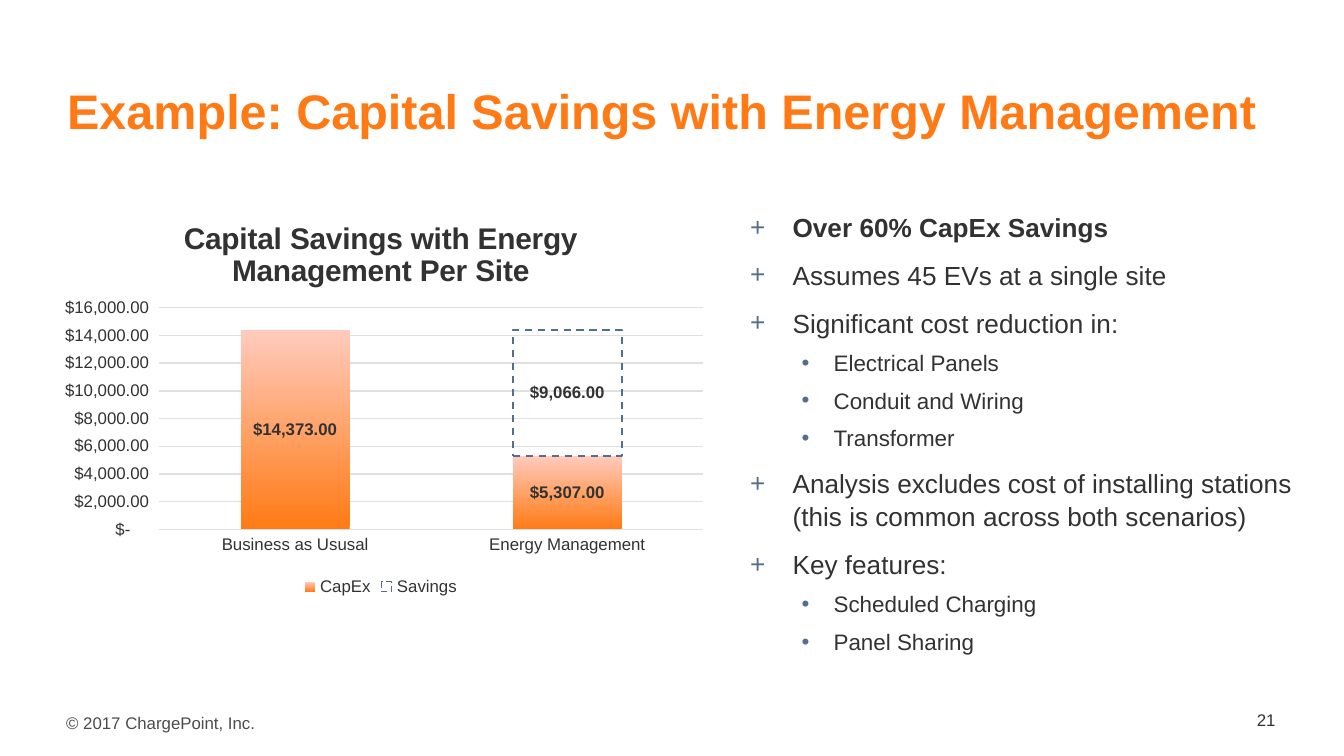
from lxml import etree
from pptx import Presentation
from pptx.chart.data import CategoryChartData
from pptx.dml.color import RGBColor
from pptx.enum.chart import XL_CHART_TYPE as ChartType, XL_LABEL_POSITION as LabelPosition
from pptx.enum.chart import XL_LEGEND_POSITION as LegendPosition, XL_TICK_MARK as TickMark
from pptx.enum.dml import MSO_LINE
from pptx.enum.text import MSO_ANCHOR as Anchor, PP_ALIGN as Align
from pptx.oxml import parse_xml
from pptx.oxml.ns import nsdecls, qn
from pptx.util import Pt

ORANGE, PEACH, BLUE = "FF7A14", "FFCBBD", "546E8F"
DARK, GREY, GRID = "323232", "4C4C4C", "E0E0E0"
DOLLARS = r'_("$"* #,##0.00_);_("$"* \(#,##0.00\);_("$"* "-"??_);_(@_)'


def set_font(font, size, color=DARK, bold=False):
    font.name, font.size, font.bold = "Arial", Pt(size), bold
    font.color.rgb = RGBColor.from_string(color)


def add_text(left, top, width, height, margins, text=""):
    frame = slide.shapes.add_textbox(Pt(left), Pt(top), Pt(width), Pt(height)).text_frame
    frame.word_wrap = True
    frame.margin_left, frame.margin_top, frame.margin_right, frame.margin_bottom = map(Pt, margins)
    frame.text = text
    return frame


presentation = Presentation()
presentation.slide_width, presentation.slide_height = Pt(720), Pt(405)
slide = presentation.slides.add_slide(presentation.slide_layouts[6])

# Footer
frame = add_text(35.5, 378, 111, 18, (0, 3.6, 7.2, 3.6), "© 2017 ChargePoint, Inc.")
frame.word_wrap = False
set_font(frame.paragraphs[0].runs[0].font, 9, GREY)

# Title
frame = add_text(36, 43.2, 648, 31.7, (0, 0, 0, 0),
                 "Example: Capital Savings with Energy Management")
set_font(frame.paragraphs[0].runs[0].font, 26, ORANGE, True)

# Bullet list: level and text
bullets = [
    (0, "Over 60% CapEx Savings"),
    (0, "Assumes 45 EVs at a single site"),
    (0, "Significant cost reduction in:"),
    (1, "Electrical Panels"),
    (1, "Conduit and Wiring"),
    (1, "Transformer"),
    (0, "Analysis excludes cost of installing stations (this is common across both scenarios)"),
    (0, "Key features:"),
    (1, "Scheduled Charging"),
    (1, "Panel Sharing"),
]
# Mark, left margin, hanging indent, space before, text size
levels = [("+", 22.8, 22.8, 6, 14), ("•", 44.8, 17.2, 3, 12)]
frame = add_text(401.8, 112.4, 300, 235.4, (0, 0, 0, 0))
for index, (level, text) in enumerate(bullets):
    mark, margin, hanging, before, size = levels[level]
    paragraph = frame.add_paragraph() if index else frame.paragraphs[0]
    paragraph.text = text
    paragraph.level = level
    paragraph.line_spacing = 1.05
    paragraph.space_before = Pt(before if index else 0)
    paragraph.space_after = Pt(2)
    properties = paragraph._p.get_or_add_pPr()
    properties.set("marL", str(Pt(margin)))
    properties.set("indent", str(-Pt(hanging)))
    bullet_color = etree.SubElement(properties, qn("a:buClr"))
    etree.SubElement(bullet_color, qn("a:srgbClr")).set("val", BLUE)
    etree.SubElement(properties, qn("a:buFont")).set("typeface", "Arial")
    etree.SubElement(properties, qn("a:buChar")).set("char", mark)
    set_font(paragraph.runs[0].font, size, bold=index == 0)

# Slide number
frame = add_text(606.2, 376.6, 84.2, 18, (7.2, 3.6, 7.2, 3.6), "21")
frame.vertical_anchor = Anchor.MIDDLE
frame.paragraphs[0].alignment = Align.RIGHT
set_font(frame.paragraphs[0].runs[0].font, 9)

# Stacked column chart
data = CategoryChartData(number_format=DOLLARS)
data.categories = ["Business as Ususal", "Energy Management"]
data.add_series("CapEx", (14373, 5307))
data.add_series("Savings", (None, 9066))
chart = slide.shapes.add_chart(ChartType.COLUMN_STACKED, Pt(24), Pt(106.6),
                               Pt(360), Pt(216), data).chart
set_font(chart.font, 10)

title = chart.chart_title.text_frame
title.text = "Capital Savings with Energy Management Per Site"
set_font(title.paragraphs[0].runs[0].font, 16, bold=True)

chart.has_legend = True
chart.legend.position = LegendPosition.BOTTOM
chart.legend.include_in_layout = False
set_font(chart.legend.font, 9)

# Axes
for axis in (chart.category_axis, chart.value_axis):
    axis.major_tick_mark = axis.minor_tick_mark = TickMark.NONE
    set_font(axis.tick_labels.font, 9)
chart.value_axis.format.line.fill.background()
chart.value_axis.minimum_scale, chart.value_axis.maximum_scale = 0, 16000
chart.value_axis.major_unit = 2000
chart.value_axis.tick_labels.number_format = DOLLARS
chart.value_axis.tick_labels.number_format_is_linked = False
for line in (chart.category_axis.format.line, chart.value_axis.major_gridlines.format.line):
    line.color.rgb = RGBColor.from_string(GRID)
    line.width = Pt(0.75)

# Series
plot = chart.plots[0]
plot.gap_width, plot.overlap, plot.vary_by_categories = 150, 100, False
capex, savings = plot.series
fill = capex.format.fill
fill.gradient()
fill.gradient_angle = 90
for stop, color in zip(fill.gradient_stops, (ORANGE, PEACH)):
    stop.color.rgb = RGBColor.from_string(color)
savings.format.fill.background()
savings.format.line.color.rgb = RGBColor.from_string(BLUE)
savings.format.line.width = Pt(1)
savings.format.line.dash_style = MSO_LINE.DASH
for series in (capex, savings):
    series.invert_if_negative = False
    labels = series.data_labels
    labels.show_value = True
    labels.position = LabelPosition.CENTER
    labels.number_format, labels.number_format_is_linked = DOLLARS, False
    set_font(labels.font, 9, bold=True)

# Fixed plot area, as fractions of the chart
plot_area = chart._chartSpace.chart.plotArea
for old_layout in plot_area.findall(qn("c:layout")):
    plot_area.remove(old_layout)
plot_area.insert(0, parse_xml(
    f'<c:layout {nsdecls("c")}><c:manualLayout><c:layoutTarget val="inner"/>'
    '<c:xMode val="edge"/><c:yMode val="edge"/><c:x val="0.17"/><c:y val="0.27"/>'
    '<c:w val="0.81"/><c:h val="0.55"/></c:manualLayout></c:layout>'))

presentation.save("out.pptx")
